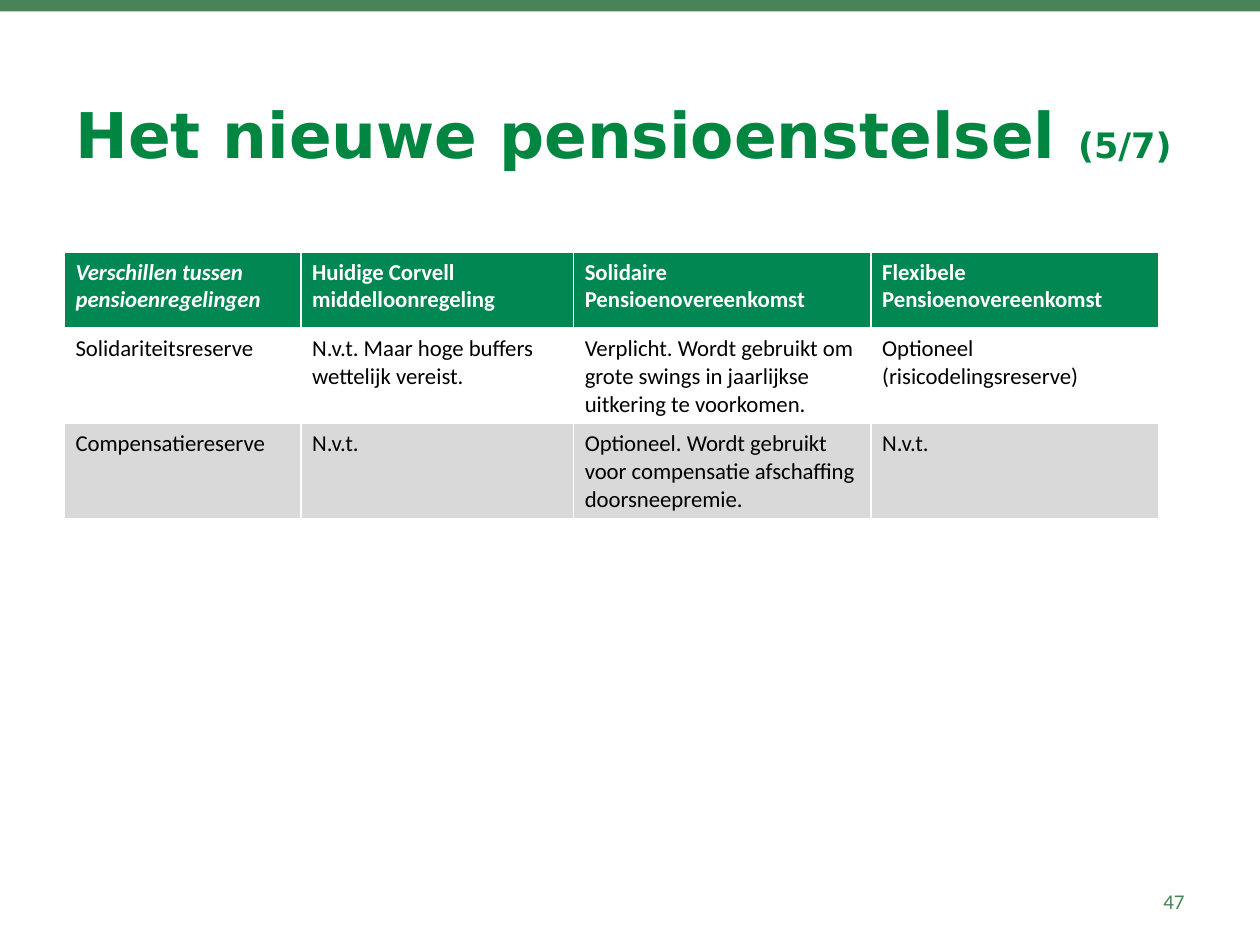
from lxml.etree import SubElement
from pptx import Presentation
from pptx.dml.color import RGBColor
from pptx.enum.shapes import MSO_SHAPE
from pptx.enum.text import MSO_ANCHOR, PP_ALIGN
from pptx.oxml.ns import qn
from pptx.util import Inches, Pt


def color(code):
    return RGBColor.from_string(code)


def write(para, text, font="Calibri", size=13, ink="000000", bold=False, slant=False):
    run = para.add_run()
    run.text = text
    face = run.font
    face.name, face.size, face.bold, face.italic = font, Pt(size), bold, slant
    face.color.rgb = color(ink)


def edge(cell, sides):
    props = cell._tc.get_or_add_tcPr()
    for spot, (side, width) in enumerate(sides.items()):
        line = SubElement(props, qn(f"a:ln{side}"), w=str(Pt(width)))
        fill = SubElement(line, qn("a:solidFill"))
        SubElement(fill, qn("a:srgbClr"), val="FFFFFF")
        props.insert(spot, line)


class Deck:
    green, leaf, head, gray, white = "008640", "488455", "008752", "D9D9D9", "FFFFFF"

    def __init__(self):
        self.file = Presentation()
        self.file.slide_width, self.file.slide_height = Inches(10), Inches(7.5)
        self.slide = self.file.slides.add_slide(self.file.slide_layouts[6])

    def area(self, left, top, width, height):
        wide, high = self.file.slide_width, self.file.slide_height
        return [int(part * size / 100) for part, size in
                ((left, wide), (top, high), (width, wide), (height, high))]

    def band(self, *box):
        shape = self.slide.shapes.add_shape(MSO_SHAPE.RECTANGLE, *self.area(*box))
        shape.shadow.inherit = False
        shape.fill.solid()
        shape.fill.fore_color.rgb = color(self.leaf)
        shape.line.fill.background()

    def text(self, box, *runs, align=PP_ALIGN.LEFT):
        frame = self.slide.shapes.add_textbox(*self.area(*box)).text_frame
        frame.word_wrap = True
        frame.vertical_anchor = MSO_ANCHOR.MIDDLE
        para = frame.paragraphs[0]
        para.alignment = align
        for words, style in runs:
            write(para, words, **style)

    def table(self, box, cols, rows, data):
        shape = self.slide.shapes.add_table(len(rows), len(cols), *self.area(*box))
        grid = shape.table
        for col, part in zip(grid.columns, cols):
            col.width = int(shape.width * part / sum(cols))
        for row, part in zip(grid.rows, rows):
            row.height = int(shape.height * part / sum(rows))
        fills = self.head, self.white, self.gray
        for r, (line, fill) in enumerate(zip(data, fills)):
            top = r == 0
            for c, words in enumerate(line):
                cell = grid.cell(r, c)
                cell.margin_left = cell.margin_right = Inches(0.09)
                cell.margin_top = cell.margin_bottom = Inches(0.05)
                cell.fill.solid()
                cell.fill.fore_color.rgb = color(fill)
                edge(cell, {"L": 1, "R": 1, "T": 3 if r == 1 else 1, "B": 3 if top else 1})
                write(cell.text_frame.paragraphs[0], words, bold=top,
                      slant=top and c == 0, ink=self.white if top else "000000")


def main():
    deck = Deck()
    deck.band(0, -0.5, 100, 1.7)
    style = {"font": "DejaVu Sans", "ink": deck.green, "bold": True}
    deck.text((5, 6.9, 90, 14.5),
              ("Het nieuwe pensioenstelsel ", {**style, "size": 36}),
              ("(5/7)", {**style, "size": 20}))
    deck.text((71.7, 92.7, 23.3, 5.3), ("47", {"size": 12, "ink": deck.leaf}),
              align=PP_ALIGN.RIGHT)
    deck.table((5.1, 26.7, 90, 28.5), (1.88, 2.26, 2.49, 2.38), (0.61, 0.75, 0.78), (
        ("Verschillen tussen pensioenregelingen", "Huidige Corvell middelloonregeling",
         "Solidaire Pensioenovereenkomst", "Flexibele Pensioenovereenkomst"),
        ("Solidariteitsreserve", "N.v.t. Maar hoge buffers wettelijk vereist.",
         "Verplicht. Wordt gebruikt om grote swings in jaarlijkse uitkering te voorkomen.",
         "Optioneel (risicodelingsreserve)"),
        ("Compensatiereserve", "N.v.t.",
         "Optioneel. Wordt gebruikt voor compensatie afschaffing doorsneepremie.", "N.v.t."),
    ))
    deck.file.save("out.pptx")


if __name__ == "__main__":
    main()
